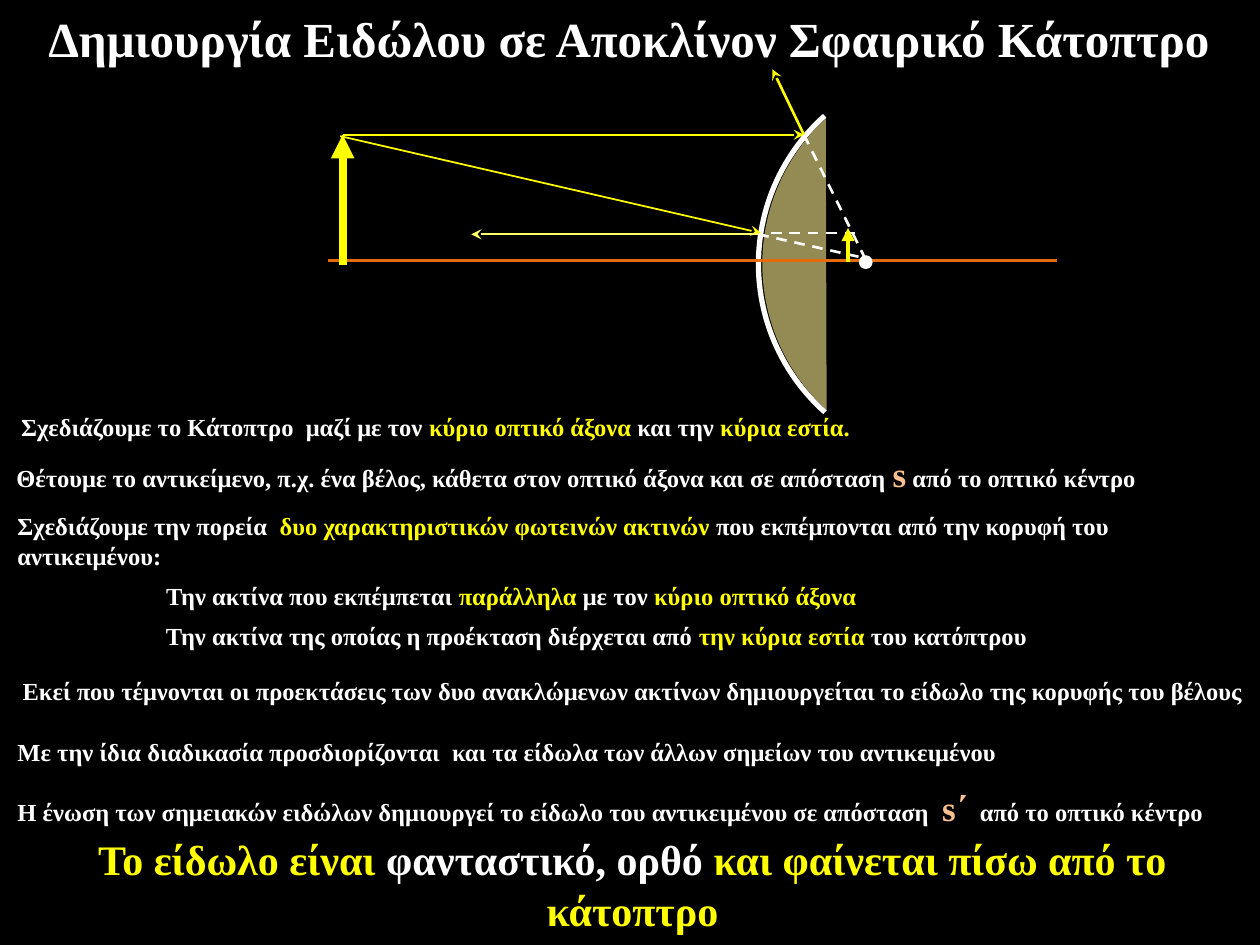
"""Build a slide on how a diverging spherical mirror forms an image."""
import dataclasses
import typing

import pptx
import pptx.dml.color
import pptx.enum.dml
import pptx.enum.shapes
import pptx.enum.text
import pptx.oxml
import pptx.oxml.ns
import pptx.util

Pt = pptx.util.Pt
RGB = pptx.dml.color.RGBColor
KIND = pptx.enum.shapes.MSO_SHAPE
ALIGN = pptx.enum.text.PP_ALIGN

BLACK = RGB(0x00, 0x00, 0x00)
WHITE = RGB(0xFF, 0xFF, 0xFF)
YELLOW = RGB(0xFF, 0xFF, 0x00)
PALE = RGB(0xFF, 0xFF, 0x66)
PEACH = RGB(0xFA, 0xC0, 0x90)
ORANGE = RGB(0xE4, 0x6C, 0x0A)
OLIVE = RGB(0x94, 0x8A, 0x54)
FONT = "Times New Roman"
DEGREE = 0.6


@dataclasses.dataclass(frozen=True)
class Span:
    """A stretch of text in one colour and size."""
    text: str
    color: RGB = WHITE
    size: float = 14


@dataclasses.dataclass(frozen=True)
class Note:
    """A text box of one paragraph."""
    left: float
    top: float
    width: float
    height: float
    spans: tuple[Span, ...]
    align: typing.Any = ALIGN.LEFT


@dataclasses.dataclass(frozen=True)
class Ray:
    """A straight line, perhaps dashed or with an arrowhead."""
    start: tuple[float, float]
    end: tuple[float, float]
    color: RGB
    width: float
    head: str = ""
    dash: bool = False


@dataclasses.dataclass(frozen=True)
class Disc:
    """A round shape with optional angles, in degrees."""
    kind: typing.Any
    left: float
    top: float
    size: float
    fill: RGB
    edge: float = 0
    angles: tuple[float, ...] = ()


TIP = (195.8, 77)
BEND = (459.4, 77)
TOUCH = (433.4, 133.9)
DISCS = (
    Disc(KIND.ARC, 433.4, 37.4, 226.8, BLACK, 3, (131.64, 228.24)),
    Disc(KIND.CHORD, 435.6, 37.4, 226.8, OLIVE, angles=(132.51, 227.14)),
)
FOCUS = Disc(KIND.OVAL, 491.8, 146.9, 5.8, WHITE, 2)
AXIS = Ray((187.2, 149), (604.1, 149), ORANGE, 1.5)
RAYS = (
    Ray((195.8, 151.2), TIP, YELLOW, 4.5, "triangle"),
    Ray(TIP, BEND, YELLOW, 1, "stealth"),
    Ray(BEND, (441.4, 39.6), YELLOW, 1.5, "stealth"),
    Ray((194.4, 77.8), (434.9, 133.2), YELLOW, 1, "stealth"),
    Ray(TOUCH, (494.6, 147.6), WHITE, 1.5, dash=True),
    Ray(TOUCH, (269.3, 133.9), PALE, 1, "stealth"),
    Ray(BEND, (495.4, 149.8), WHITE, 1.5, dash=True),
    Ray((440.6, 133.2), (489.6, 133.2), WHITE, 1.5, dash=True),
    Ray((484.6, 149.8), (484.6, 130.3), YELLOW, 2.5, "triangle"),
)
NOTES = (
    Note(-0.7, 1.4, 720, 38.2, (
        Span("Δημιουργία Ειδώλου σε Αποκλίνον Σφαιρικό Κάτοπτρο", size=28),
    ), ALIGN.CENTER),
    Note(5, 231.8, 689, 28, (
        Span("Σχεδιάζουμε το Κάτοπτρο  μαζί με τον "),
        Span("κύριο οπτικό άξονα ", YELLOW),
        Span("και την "),
        Span("κύρια εστία.", YELLOW))),
    Note(2.2, 254.9, 663.8, 34.6, (
        Span("Θέτουμε το αντικείμενο, π.χ. ένα βέλος, κάθετα στον οπτικό "
             "άξονα και σε απόσταση "),
        Span("s", PEACH, 20),
        Span(" από το οπτικό κέντρο"))),
    Note(2.9, 288.7, 700.6, 45.4, (
        Span("Σχεδιάζουμε την πορεία  "),
        Span("δυο χαρακτηριστικών φωτεινών ακτινών ", YELLOW),
        Span("που εκπέμπονται από την κορυφή του αντικειμένου:"))),
    Note(87.8, 328.3, 430.6, 27.4, (
        Span("Την ακτίνα που εκπέμπεται "),
        Span("παράλληλα", YELLOW),
        Span(" με τον "),
        Span("κύριο οπτικό άξονα", YELLOW))),
    Note(87.8, 351.4, 521.3, 31, (
        Span("Την ακτίνα της οποίας η προέκταση διέρχεται από "),
        Span("την κύρια εστία ", YELLOW),
        Span("του κατόπτρου"))),
    Note(5.8, 383, 714.2, 33.8, (
        Span("Εκεί που τέμνονται οι προεκτάσεις των δυο ανακλώμενων ακτίνων "
             "δημιουργείται το είδωλο της κορυφής του βέλους"),)),
    Note(2.9, 417.6, 601.2, 33.8, (
        Span("Με την ίδια διαδικασία προσδιορίζονται  και τα είδωλα των "
             "άλλων σημείων του αντικειμένου"),)),
    Note(2.9, 445.7, 700.6, 33.8, (
        Span("Η ένωση των σημειακών ειδώλων δημιουργεί το είδωλο του "
             "αντικειμένου σε απόσταση  "),
        Span("s΄", PEACH, 20),
        Span("  από το οπτικό κέντρο"))),
    Note(2.9, 473, 717.1, 63.4, (
        Span("Το είδωλο είναι ", YELLOW, 24),
        Span("φανταστικό, ορθό ", size=24),
        Span("και φαίνεται πίσω από το κάτοπτρο", YELLOW, 24),
    ), ALIGN.CENTER),
)


def write(para: typing.Any, text: str, *, color: RGB, size: float) -> None:
    """Add a bold run to a paragraph."""
    run = para.add_run()
    run.text = text
    run.font.name = FONT
    run.font.bold = True
    run.font.size = Pt(size)
    run.font.color.rgb = color


def draw_note(shapes: typing.Any, note: Note) -> None:
    """Draw a wrapped text box."""
    box = shapes.add_textbox(Pt(note.left), Pt(note.top),
                             Pt(note.width), Pt(note.height))
    box.text_frame.word_wrap = True
    para = box.text_frame.paragraphs[0]
    para.alignment = note.align
    for span in note.spans:
        write(para, span.text, color=span.color, size=span.size)


def draw_ray(shapes: typing.Any, ray: Ray) -> None:
    """Draw a straight connector."""
    line = shapes.add_connector(pptx.enum.shapes.MSO_CONNECTOR.STRAIGHT,
                                *map(Pt, ray.start + ray.end))
    line.line.color.rgb = ray.color
    line.line.width = Pt(ray.width)
    if ray.dash:
        line.line.dash_style = pptx.enum.dml.MSO_LINE.DASH
    if ray.head:
        tail = pptx.oxml.parse_xml(
            f'<a:tailEnd {pptx.oxml.ns.nsdecls("a")} type="{ray.head}"/>')
        line.line._get_or_add_ln().append(tail)
    line._element.spPr.append(pptx.oxml.parse_xml(
        f'<a:effectLst {pptx.oxml.ns.nsdecls("a")}/>'))


def draw_disc(shapes: typing.Any, disc: Disc) -> None:
    """Draw a round shape, edged in white if it has an edge."""
    shape = shapes.add_shape(disc.kind, Pt(disc.left), Pt(disc.top),
                             Pt(disc.size), Pt(disc.size))
    shape.shadow.inherit = False
    shape.fill.solid()
    shape.fill.fore_color.rgb = disc.fill
    for place, angle in enumerate(disc.angles):
        shape.adjustments[place] = angle * DEGREE
    if disc.edge:
        shape.line.color.rgb = WHITE
        shape.line.width = Pt(disc.edge)
    else:
        shape.line.fill.background()


def main() -> None:
    """Build and save the slide."""
    deck = pptx.Presentation()
    deck.slide_width, deck.slide_height = Pt(720), Pt(540)
    slide = deck.slides.add_slide(deck.slide_layouts[6])
    slide.background.fill.solid()
    slide.background.fill.fore_color.rgb = BLACK
    for disc in DISCS:
        draw_disc(slide.shapes, disc)
    draw_ray(slide.shapes, AXIS)
    draw_disc(slide.shapes, FOCUS)
    for ray in RAYS:
        draw_ray(slide.shapes, ray)
    for note in NOTES:
        draw_note(slide.shapes, note)
    deck.save("out.pptx")


if __name__ == "__main__":
    main()
